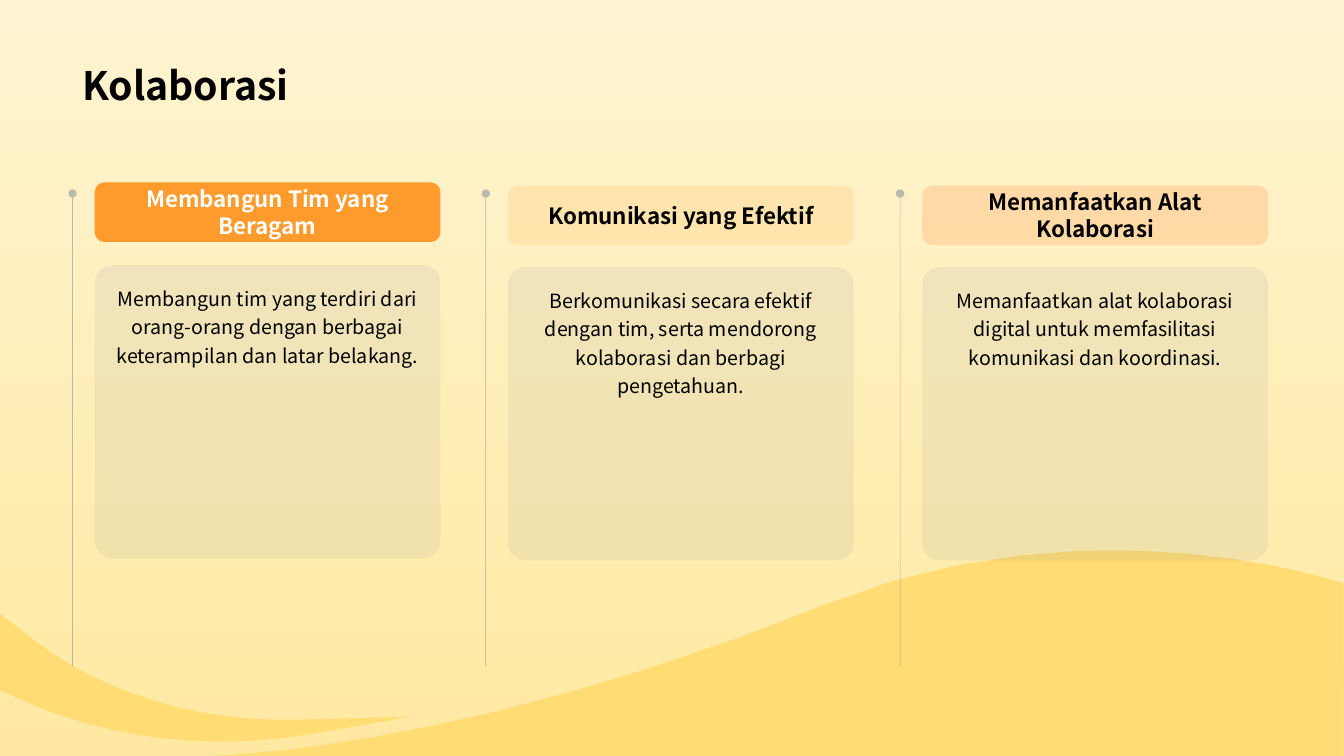
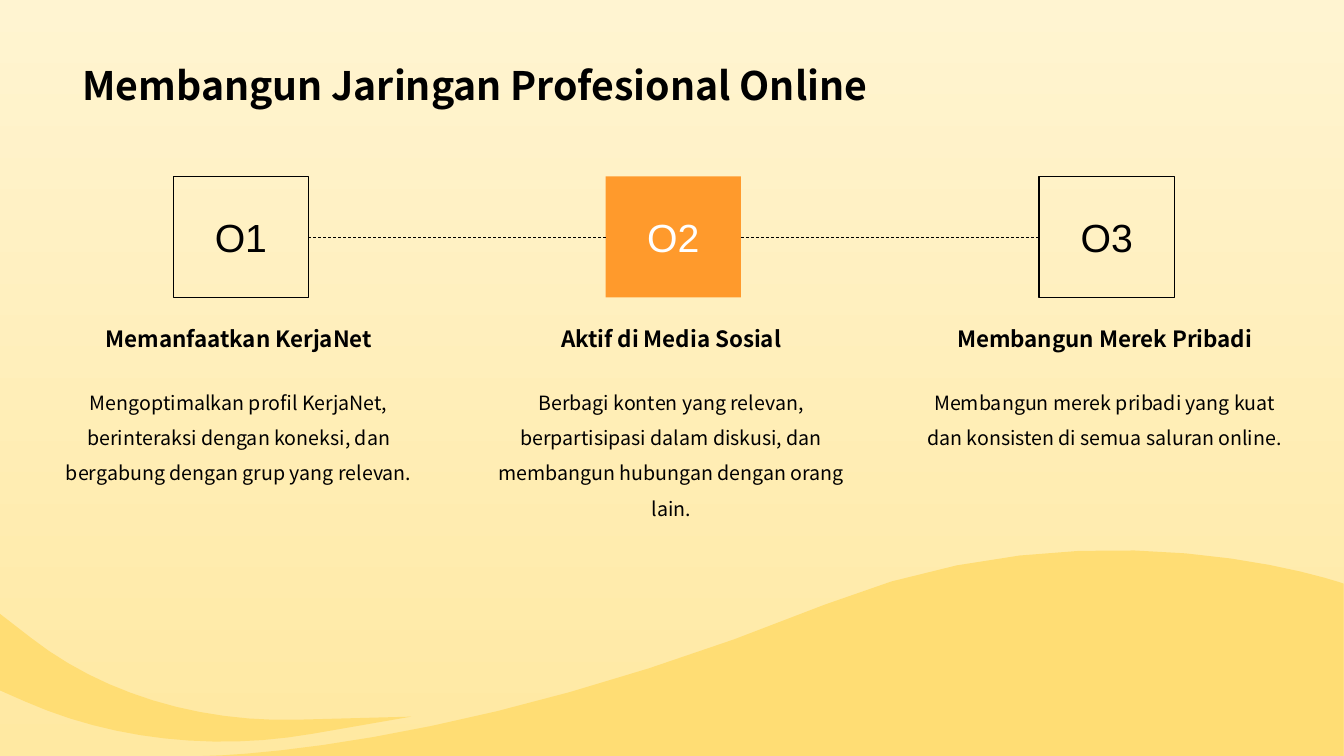
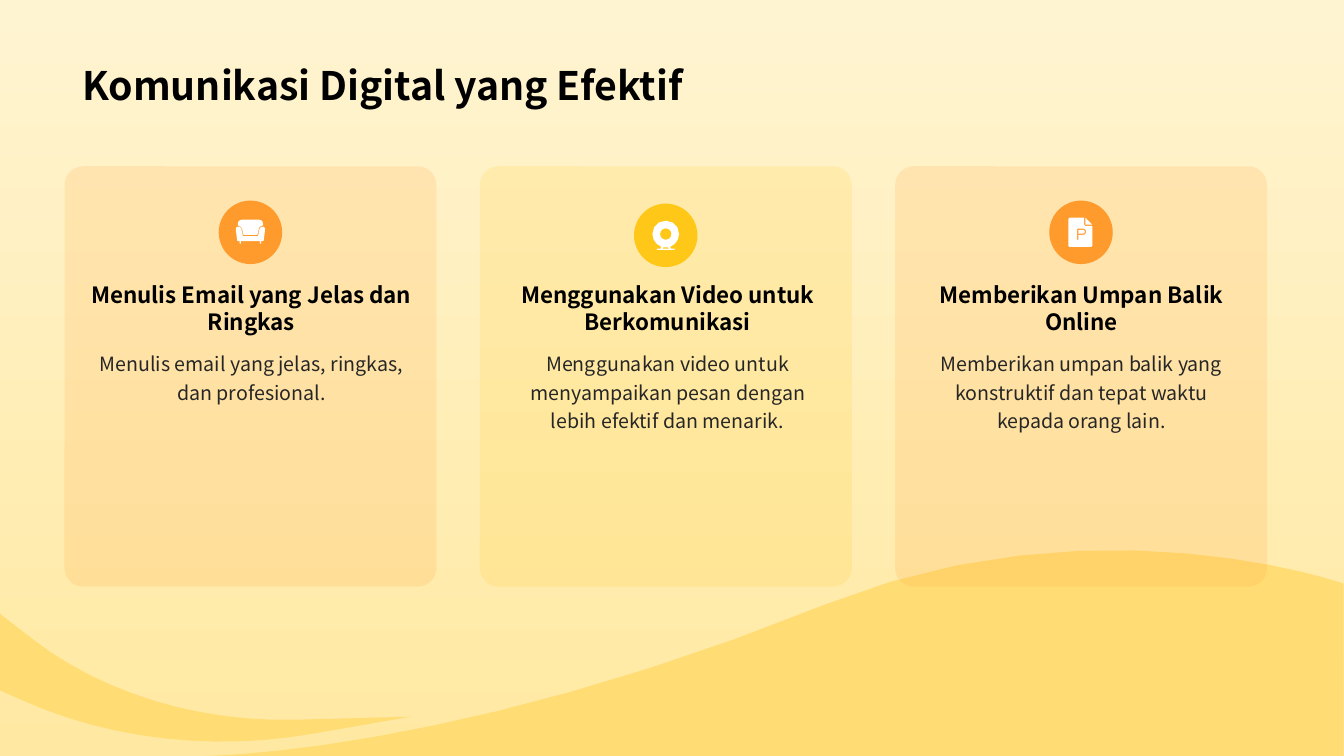
import pptx
import pptx.dml.color
import pptx.enum.dml
import pptx.enum.shapes
import pptx.enum.text
import pptx.oxml
import pptx.oxml.ns
import pptx.util

PX = 9144
PAGE_SIZE = (12192000, 6858000)
SANS, NUMERAL = "Noto Sans CJK SC", "Arial"
BLACK, CHARCOAL, WHITE = "000000", "262626", "FFFFFF"
ORANGE, RED, YELLOW, SLATE, WAVE = "FF9A2C", "FF5900", "FFC717", "778495", "FFDD74"
SKY = ("FFE9A2", "FFF4D1")

SHAPE = pptx.enum.shapes.MSO_SHAPE
DASH = pptx.enum.dml.MSO_LINE
CENTER = pptx.enum.text.PP_ALIGN.CENTER
LEFT = pptx.enum.text.PP_ALIGN.LEFT
TOP = pptx.enum.text.MSO_ANCHOR.TOP
MIDDLE = pptx.enum.text.MSO_ANCHOR.MIDDLE
BOTTOM = pptx.enum.text.MSO_ANCHOR.BOTTOM
GROW = pptx.enum.text.MSO_AUTO_SIZE.SHAPE_TO_FIT_TEXT

FONTS = {
    "title": {"name": SANS, "size": pptx.util.Pt(28), "bold": True},
    "heading": {"name": SANS, "size": pptx.util.Pt(16), "bold": True},
    "body": {"name": SANS, "size": pptx.util.Pt(14), "bold": False},
    "number": {"name": NUMERAL, "size": pptx.util.Pt(28), "bold": False},
}

WAVES = [
    [(818, 600), (1086, 492, 1333, 579, 1333, 579), (1333, 750), (201, 750),
     (201, 750, 447, 750, 818, 600)],
    [(0, 609), (31, 633), (100, 687, 196, 717, 296, 714), (408, 711), (310, 728),
     (213, 745, 111, 734, 25, 696), (0, 685)],
]

ARMCHAIR = [
    [(70, 41), (72, 41, 73, 44, 73, 46), (71, 62), (71, 63, 70, 64, 69, 64),
     (67, 64), (67, 68), (65, 68), (65, 64), (35, 64), (35, 68), (33, 68), (33, 64),
     (31, 64), (30, 64, 29, 63, 29, 62), (27, 46), (27, 43, 28, 41, 30, 41),
     (33, 41, 36, 43, 36, 46), (38, 56), (62, 56), (64, 46), (64, 43, 67, 41, 70, 41)],
    [(63, 30), (67, 30, 70, 33, 70, 37), (70, 39), (66, 40, 63, 42, 63, 45), (61, 54),
     (39, 54), (37, 45), (36, 42, 34, 40, 30, 39), (30, 37), (30, 33, 33, 30, 37, 30)],
]
WEBCAM = [
    [(50, 27), (62, 27, 71, 36, 71, 48), (71, 57, 65, 65, 57, 68), (58, 71), (64, 71),
     (64, 73), (36, 73), (36, 71), (42, 71), (43, 68), (35, 65, 29, 57, 29, 48),
     (29, 36, 38, 27, 50, 27)],
    [(46, 69), (45, 71), (55, 71), (54, 69)],
    [(50, 39), (45, 39, 41, 43, 41, 48), (41, 53, 45, 57, 50, 57),
     (55, 57, 59, 53, 59, 48), (59, 43, 55, 39, 50, 39)],
]
DOCUMENT = [
    [(55, 27), (55, 37), (55, 39, 56, 40, 58, 40), (68, 40), (68, 70),
     (68, 72, 67, 73, 65, 73), (33, 73), (31, 73, 30, 72, 30, 70), (30, 30),
     (30, 28, 31, 27, 33, 27)],
    [(53, 44), (44, 44), (44, 62), (46, 62), (46, 54), (53, 54),
     (56, 54, 58, 52, 58, 49), (58, 46, 56, 44, 53, 44)],
    [(53, 46), (55, 46, 56, 47, 56, 49), (56, 51, 55, 52, 53, 52), (46, 52), (46, 46)],
    [(57, 27), (57, 36), (57, 38, 57, 38, 58, 38), (68, 38)],
]


def color(value):
    """Turn a hex string into a colour."""
    return pptx.dml.color.RGBColor.from_string(value)


def emu(*lengths):
    """Turn px lengths into EMU."""
    return [length * PX for length in lengths]


def set_all(target, values):
    """Set each attribute named in a dict."""
    for name, value in values.items():
        setattr(target, name, value)


def add_alpha(holder, percent):
    """Make the first plain colour below an element partly transparent."""
    tone = holder.find(".//" + pptx.oxml.ns.qn("a:srgbClr"))
    tone.append(pptx.oxml.parse_xml(
        f'<a:alpha {pptx.oxml.ns.nsdecls("a")} val="{percent * 1000}"/>'))


def paint(shape, fill=None, alpha=100, outline=None):
    """Give a shape its fill and outline, without a shadow."""
    shape.shadow.inherit = False
    if fill:
        shape.fill.solid()
        shape.fill.fore_color.rgb = color(fill)
        if alpha < 100:
            add_alpha(shape.element.spPr, alpha)
    else:
        shape.fill.background()
    if outline:
        shape.line.color.rgb = color(outline)
        shape.line.width = pptx.util.Pt(1)
    else:
        shape.line.fill.background()


def write(box, words, font, ink=BLACK, spacing=None, align=CENTER, **frame_values):
    """Fill a box with one styled paragraph."""
    set_all(box.text_frame, {"word_wrap": True, **frame_values})
    para = box.text_frame.paragraphs[0]
    set_all(para, {"alignment": align, "line_spacing": spacing})
    span = para.add_run()
    span.text = words
    set_all(span.font, FONTS[font])
    span.font.color.rgb = color(ink)


def add_text(page, box, words, font, **values):
    """Add a text box."""
    write(page.shapes.add_textbox(*emu(*box)), words, font, **values)


def add_panel(page, kind, box, corner=None, **look):
    """Add a painted preset shape."""
    panel = page.shapes.add_shape(kind, *emu(*box))
    if corner:
        panel.adjustments[0] = corner
    paint(panel, **look)
    return panel


def add_line(page, ends, ink, dash, alpha=100, head=None):
    """Add a thin straight line, with an optional head at its start."""
    line = page.shapes.add_connector(
        pptx.enum.shapes.MSO_CONNECTOR.STRAIGHT, *emu(*ends))
    set_all(line.line, {"width": pptx.util.Pt(0.5), "dash_style": dash})
    line.line.color.rgb = color(ink)
    properties = line.element.spPr
    stroke = properties.find(pptx.oxml.ns.qn("a:ln"))
    names = pptx.oxml.ns.nsdecls("a")
    if alpha < 100:
        add_alpha(stroke, alpha)
    if head:
        stroke.append(pptx.oxml.parse_xml(f'<a:headEnd {names} type="{head}"/>'))
    properties.append(pptx.oxml.parse_xml(f"<a:effectLst {names}/>"))


def flatten(contour, steps):
    """List the points of a contour, with its cubic curves sampled."""
    points = [contour[0]]
    for part in contour[1:]:
        if len(part) == 2:
            points.append(part)
            continue
        knots = [points[-1], part[:2], part[2:4], part[4:]]
        for step in range(1, steps + 1):
            t = step / steps
            weights = ((1 - t) ** 3, 3 * t * (1 - t) ** 2, 3 * t * t * (1 - t), t ** 3)
            points.append(tuple(
                sum(weight * knot[axis] for weight, knot in zip(weights, knots))
                for axis in (0, 1)))
    return points


def add_outline(page, contours, fill, steps, left=0, top=0, unit=PX):
    """Add a filled freeform whose contours are measured in units."""
    fineness = 100
    builder = None
    for contour in contours:
        points = [(x * fineness, y * fineness) for x, y in flatten(contour, steps)]
        if builder is None:
            builder = page.shapes.build_freeform(*points[0], scale=unit / fineness)
        else:
            builder.move_to(*points[0])
        builder.add_line_segments(points[1:], close=True)
    paint(builder.convert_to_shape(*emu(left, top)), fill)


def add_page(deck, title):
    """Add a slide with the shared waves and title."""
    page = deck.slides.add_slide(deck.slide_layouts[6])
    for wave in WAVES:
        add_outline(page, [wave], WAVE, 12)
    add_text(page, (72, 14, 1188, 98), title, "title", align=LEFT, vertical_anchor=BOTTOM)
    return page


def add_pillar(page, left, top, body_top, heading, body, ink=BLACK, **look):
    """Add a header and a body panel, one above the other."""
    width = 343
    insets = dict.fromkeys(
        ("margin_left", "margin_right", "margin_top", "margin_bottom"), 12 * PX)
    panel = add_panel(page, SHAPE.ROUNDED_RECTANGLE, (left, body_top, width, 291),
                      0.06, fill=SLATE, alpha=10)
    write(panel, body, "body", spacing=1.2, vertical_anchor=TOP, **insets)
    header = add_panel(page, SHAPE.ROUNDED_RECTANGLE, (left, top, width, 59), 0.16, **look)
    write(header, heading, "heading", ink, vertical_anchor=MIDDLE, **insets)


def add_step(page, left, top, number, heading, body, ink=BLACK, **look):
    """Add a numbered square with centred text below it."""
    square = add_panel(page, SHAPE.RECTANGLE, (left, top, 134, 120), **look)
    write(square, number, "number", ink, vertical_anchor=MIDDLE)
    add_text(page, (left - 133, top + 143, 396, 37), heading, "heading", auto_size=GROW)
    add_text(page, (left - 133, top + 196, 396, 112), body, "body", spacing=1.5,
             auto_size=GROW)


def add_card(page, left, top, hue, icon, drop, inset, text_width, heading, body):
    """Add a tinted card with an icon disc, a heading and a body."""
    width, disc = 369, 63
    add_panel(page, SHAPE.ROUNDED_RECTANGLE, (left, top, width, 417), 0.05,
              fill=hue, alpha=15)
    text_left = left + inset
    add_text(page, (text_left, top + 135, text_width, 37), heading, "heading",
             vertical_anchor=BOTTOM, auto_size=GROW)
    add_text(page, (text_left, top + 175, text_width, 72), body, "body", ink=CHARCOAL,
             spacing=1.2, auto_size=GROW)
    disc_left, disc_top = left + (width - disc) // 2, top + drop
    add_panel(page, SHAPE.OVAL, (disc_left, disc_top, disc, disc), fill=hue)
    add_outline(page, icon, WHITE, 3, disc_left, disc_top, disc * PX / 100)


def build_collaboration(deck):
    """Build the slide of three pillars beside vertical lines."""
    page = add_page(deck, "Kolaborasi")
    pillars = [
        (181, 263, "Membangun Tim yang Beragam",
         "Membangun tim yang terdiri dari orang-orang dengan berbagai keterampilan "
         "dan latar belakang.", {"fill": ORANGE, "ink": WHITE}),
        (184, 265, "Komunikasi yang Efektif",
         "Berkomunikasi secara efektif dengan tim, serta mendorong kolaborasi dan "
         "berbagi pengetahuan.", {"fill": ORANGE, "alpha": 15}),
        (184, 265, "Memanfaatkan Alat Kolaborasi",
         "Memanfaatkan alat kolaborasi digital untuk memfasilitasi komunikasi dan "
         "koordinasi.", {"fill": RED, "alpha": 15}),
    ]
    for index, (top, body_top, heading, body, look) in enumerate(pillars):
        left = 72 + 821 * index // 2
        add_line(page, (left, 192, left, 661), SLATE, DASH.SOLID, 50, "oval")
        add_pillar(page, left + 22, top, body_top, heading, body, **look)


def build_network(deck):
    """Build the slide of three linked steps."""
    page = add_page(deck, "Membangun Jaringan Profesional Online")
    plain = {"outline": BLACK}
    steps = [
        ("O1", "Memanfaatkan KerjaNet",
         "Mengoptimalkan profil KerjaNet, berinteraksi dengan koneksi, dan bergabung "
         "dengan grup yang relevan.", plain),
        ("O2", "Aktif di Media Sosial",
         "Berbagi konten yang relevan, berpartisipasi dalam diskusi, dan membangun "
         "hubungan dengan orang lain.", {"fill": ORANGE, "ink": WHITE}),
        ("O3", "Membangun Merek Pribadi",
         "Membangun merek pribadi yang kuat dan konsisten di semua saluran online.", plain),
    ]
    lefts = [172 + 859 * index // 2 for index in range(len(steps))]
    for left, (number, heading, body, look) in zip(lefts, steps):
        add_step(page, left, 175, number, heading, body, **look)
    for left, next_left in zip(lefts, lefts[1:]):
        add_line(page, (left + 134, 235, next_left, 235), BLACK, DASH.DASH)


def build_communication(deck):
    """Build the slide of three icon cards."""
    page = add_page(deck, "Komunikasi Digital yang Efektif")
    cards = [
        (ORANGE, ARMCHAIR, 34, 12, 347, "Menulis Email yang Jelas dan Ringkas",
         "Menulis email yang jelas, ringkas, dan profesional."),
        (YELLOW, WEBCAM, 37, 18, 337, "Menggunakan Video untuk Berkomunikasi",
         "Menggunakan video untuk menyampaikan pesan dengan lebih efektif dan menarik."),
        (ORANGE, DOCUMENT, 34, 18, 334, "Memberikan Umpan Balik Online",
         "Memberikan umpan balik yang konstruktif dan tepat waktu kepada orang lain."),
    ]
    for index, card in enumerate(cards):
        add_card(page, 64 + 412 * index, 165, *card)


def main():
    """Build and save the deck."""
    deck = pptx.Presentation()
    deck.slide_width, deck.slide_height = PAGE_SIZE
    sky = deck.slide_master.background.fill
    sky.gradient()
    sky.gradient_angle = 90
    for stop, tone in zip(sky.gradient_stops, SKY):
        stop.color.rgb = color(tone)
    build_collaboration(deck)
    build_network(deck)
    build_communication(deck)
    deck.save("out.pptx")


if __name__ == "__main__":
    main()
